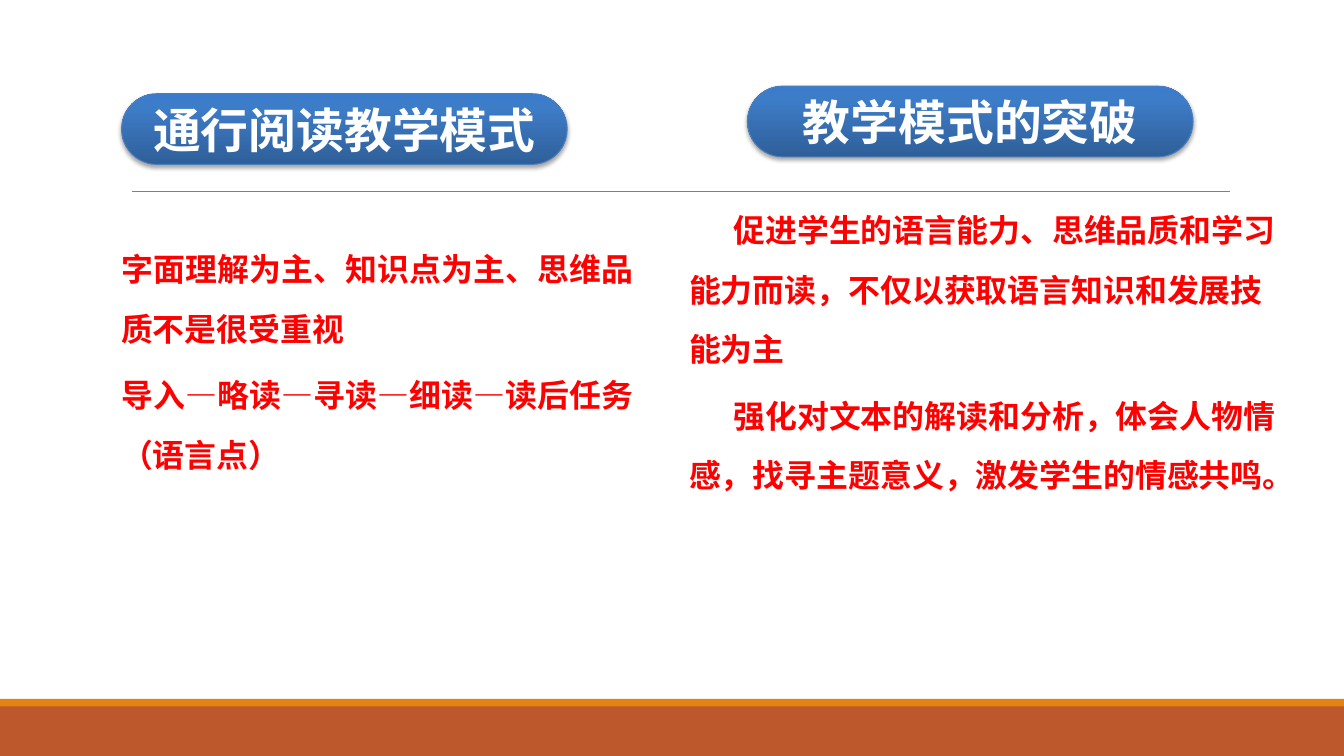
from lxml.etree import SubElement
from pptx import Presentation
from pptx.dml.color import RGBColor
from pptx.enum.shapes import MSO_CONNECTOR, MSO_SHAPE
from pptx.enum.text import MSO_ANCHOR, PP_ALIGN
from pptx.oxml.ns import qn
from pptx.util import Cm, Pt

THEME = {
    "band": "BD582C", "stripe": "E48312", "rule": "808080",
    "pill": [(0, "2F5F99"), (80, "3D7CC7"), (100, "3A7CCB")],
    "pill_line": "4B7EBC", "shadow": "000000",
    "title": {"size": 36, "font": "Calibri", "color": "FFFFFF"},
    "body": {"size": 24, "font": "Arial", "color": "FF0000"},
}
SLIDE_W, SLIDE_H = 35.71, 20.09
PILL_W, PILL_H = 11.84, 1.88

# Positions are (left, top) or (left, top, width, height) in cm.
COLUMNS = [
    {"title": "通行阅读教学模式", "pill": (3.23, 2.49),
     "box": (2.97, 5.94, 14.13, 8.69), "align": PP_ALIGN.JUSTIFY, "indent": 0,
     "body": ["字面理解为主、知识点为主、思维品质不是很受重视",
              "导入—略读—寻读—细读—读后任务（语言点）"]},
    {"title": "教学模式的突破", "pill": (19.86, 2.29),
     "box": (18.06, 4.9, 16.31, 9.88), "align": PP_ALIGN.LEFT, "indent": 1.18,
     "body": ["促进学生的语言能力、思维品质和学习能力而读，不仅以获取语言知识和发展技能为主",
              "强化对文本的解读和分析，体会人物情感，找寻主题意义，激发学生的情感共鸣。"]},
]
BARS = [("band", 18.75, SLIDE_H - 18.75), ("stripe", 18.57, 0.2)]
RULE = (3.5, 32.69, 5.08)


def rgb(color):
    return RGBColor.from_string(color)


def write(tf, lines, size, font, color, align, spacing=None, before=0, indent=0):
    for i, line in enumerate(lines):
        p = tf.add_paragraph() if i else tf.paragraphs[0]
        p.alignment = align
        p.space_before = Pt(before)
        if spacing:
            p.line_spacing = Pt(spacing)
        if indent:
            p._p.get_or_add_pPr().set("indent", str(Cm(indent)))
        r = p.add_run()
        r.text = line
        r.font.size, r.font.name, r.font.bold = Pt(size), font, True
        r.font.color.rgb = rgb(color)


def add_bar(s, color, top, height):
    sp = s.shapes.add_shape(MSO_SHAPE.RECTANGLE, 0, Cm(top), Cm(SLIDE_W), Cm(height))
    sp.shadow.inherit = False
    sp.fill.solid()
    sp.fill.fore_color.rgb = rgb(color)
    sp.line.fill.background()


def add_rule(s, left, right, y):
    line = s.shapes.add_connector(MSO_CONNECTOR.STRAIGHT, Cm(left), Cm(y), Cm(right), Cm(y))
    line.line.color.rgb = rgb(THEME["rule"])
    line.line.width = Pt(0.5)
    SubElement(line._element.spPr, qn("a:effectLst"))


def add_pill(s, title, left, top):
    sp = s.shapes.add_shape(MSO_SHAPE.ROUNDED_RECTANGLE, Cm(left), Cm(top), Cm(PILL_W), Cm(PILL_H))
    sp.adjustments[0] = 0.5
    sp.line.color.rgb = rgb(THEME["pill_line"])
    sp.line.width = Pt(0.75)

    sp.fill.gradient()
    sp.fill.gradient_angle = 90
    stops = sp._element.spPr.find(qn("a:gradFill")).find(qn("a:gsLst"))
    for stop in list(stops):
        stops.remove(stop)
    for pos, color in THEME["pill"]:
        stop = SubElement(stops, qn("a:gs"), pos=str(pos * 1000))
        SubElement(stop, qn("a:srgbClr"), val=color)

    sp.shadow.inherit = False
    effects = sp._element.spPr.find(qn("a:effectLst"))
    shadow = SubElement(effects, qn("a:outerShdw"), blurRad=str(Pt(3.1)),
                        dist=str(Pt(1.8)), dir="5400000", rotWithShape="0")
    tint = SubElement(shadow, qn("a:srgbClr"), val=THEME["shadow"])
    SubElement(tint, qn("a:alpha"), val="35000")

    tf = sp.text_frame
    tf.word_wrap = False
    tf.vertical_anchor = MSO_ANCHOR.MIDDLE
    write(tf, [title], align=PP_ALIGN.CENTER, **THEME["title"])


def add_body(s, lines, box, align, indent):
    tf = s.shapes.add_textbox(*map(Cm, box)).text_frame
    tf.word_wrap = True
    write(tf, lines, align=align, spacing=45, before=4.8, indent=indent, **THEME["body"])


def main():
    prs = Presentation()
    prs.slide_width, prs.slide_height = Cm(SLIDE_W), Cm(SLIDE_H)
    s = prs.slides.add_slide(prs.slide_layouts[6])
    for name, top, height in BARS:
        add_bar(s, THEME[name], top, height)
    add_rule(s, *RULE)
    for col in COLUMNS:
        add_pill(s, col["title"], *col["pill"])
        add_body(s, col["body"], col["box"], col["align"], col["indent"])
    prs.save("out.pptx")


if __name__ == "__main__":
    main()
